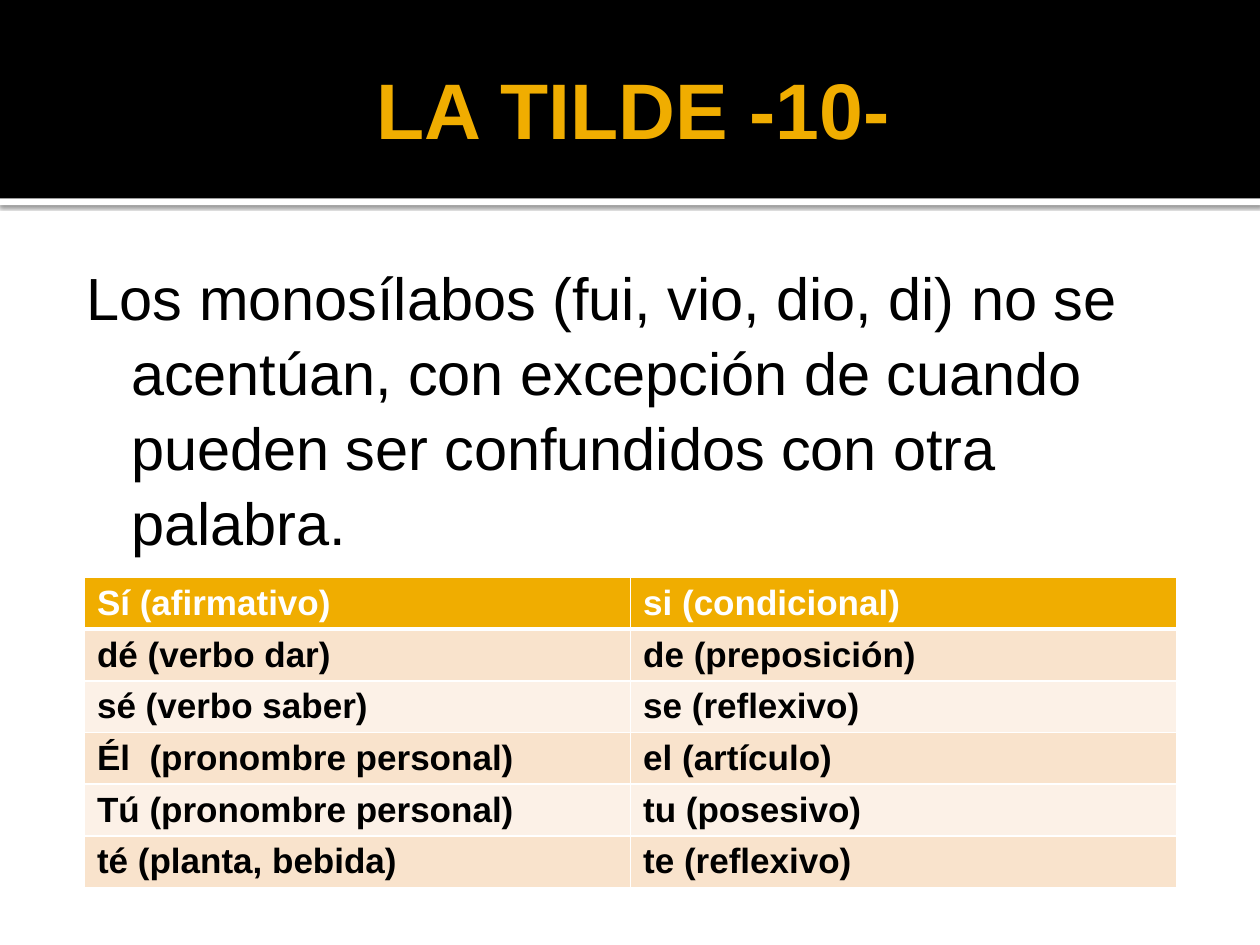
"""Build the slide on accents in Spanish monosyllables."""
import dataclasses

import lxml.etree
import pptx
import pptx.dml.color
import pptx.enum.shapes
import pptx.enum.text
import pptx.oxml
import pptx.oxml.ns
import pptx.util

Inches = pptx.util.Inches
ANCHOR = pptx.enum.text.MSO_ANCHOR
ALIGN = pptx.enum.text.PP_ALIGN


@dataclasses.dataclass(frozen=True)
class Theme:
    width: float = 10
    height: float = 7.5
    font: str = "Arial"
    gold: str = "F0AD00"
    black: str = "000000"
    white: str = "FFFFFF"
    bands: tuple = ("FCF1E7", "F9E3CC")
    title_size: int = 45
    body_size: int = 34
    table_size: int = 20


THEME = Theme()
HEADER_SHARE = 0.21
RULE_TEXT = (
    "Los monosílabos (fui, vio, dio, di) no se acentúan, con excepción "
    "de cuando pueden ser confundidos con otra palabra."
)
WORD_PAIRS = [
    ("Sí (afirmativo)", "si (condicional)"),
    ("dé (verbo dar)", "de (preposición)"),
    ("sé (verbo saber)", "se (reflexivo)"),
    ("Él  (pronombre personal)", "el (artículo)"),
    ("Tú (pronombre personal)", "tu (posesivo)"),
    ("té (planta, bebida)", "te (reflexivo)"),
]


def rgb(color):
    return pptx.dml.color.RGBColor.from_string(color)


def box(left, top, width, height):
    """Turn shares of the slide into lengths."""
    return (
        Inches(left * THEME.width),
        Inches(top * THEME.height),
        Inches(width * THEME.width),
        Inches(height * THEME.height),
    )


def write_text(frame, text, size, color, bold=False, align=ALIGN.LEFT, line_spacing=1.0):
    paragraph = frame.paragraphs[0]
    paragraph.alignment = align
    paragraph.line_spacing = line_spacing
    paragraph.space_before = pptx.util.Pt(0)
    run = paragraph.add_run()
    run.text = text
    run.font.name = THEME.font
    run.font.size = pptx.util.Pt(size)
    run.font.bold = bold
    run.font.color.rgb = rgb(color)
    return paragraph


def place_placeholder(shape, area, margins, anchor):
    shape.left, shape.top, shape.width, shape.height = box(*area)
    frame = shape.text_frame
    frame.word_wrap = True
    frame.auto_size = pptx.enum.text.MSO_AUTO_SIZE.NONE
    frame.vertical_anchor = anchor
    (frame.margin_left, frame.margin_top,
     frame.margin_right, frame.margin_bottom) = map(Inches, margins)
    return frame


def hang_without_bullet(paragraph, margin, indent):
    properties = paragraph._p.get_or_add_pPr()
    properties.set("marL", str(Inches(margin)))
    properties.set("indent", str(Inches(indent)))
    lxml.etree.SubElement(properties, pptx.oxml.ns.qn("a:buNone"))


def add_band(slide, top, height, color, layer):
    """Add a full-width band behind the placeholders."""
    band = slide.shapes.add_shape(
        pptx.enum.shapes.MSO_SHAPE.RECTANGLE, *box(0, top, 1, height))
    band.shadow.inherit = False
    band.fill.solid()
    band.fill.fore_color.rgb = rgb(color)
    band.line.fill.background()
    band.element.getparent().insert(2 + layer, band.element)
    return band


def add_shadow(shape, blur, distance, opacity):
    effects = shape.element.spPr.find(pptx.oxml.ns.qn("a:effectLst"))
    effects.append(pptx.oxml.parse_xml(
        f'<a:outerShdw {pptx.oxml.ns.nsdecls("a")} blurRad="{pptx.util.Pt(blur)}" '
        f'dist="{pptx.util.Pt(distance)}" dir="5400000" algn="t" rotWithShape="0">'
        f'<a:srgbClr val="{THEME.black}"><a:alpha val="{opacity * 1000}"/>'
        "</a:srgbClr></a:outerShdw>"))


def set_borders(cell, **widths):
    properties = cell._tc.get_or_add_tcPr()
    for position, (side, width) in enumerate(widths.items()):
        properties.insert(position, pptx.oxml.parse_xml(
            f'<a:ln{side} {pptx.oxml.ns.nsdecls("a")} w="{pptx.util.Pt(width)}">'
            f'<a:solidFill><a:srgbClr val="{THEME.white}"/></a:solidFill></a:ln{side}>'))


def add_word_table(slide, pairs, area):
    table = slide.shapes.add_table(len(pairs), len(pairs[0]), *box(*area)).table
    for row, pair in enumerate(pairs):
        header = row == 0
        fill = THEME.gold if header else THEME.bands[row % 2]
        color = THEME.white if header else THEME.black
        for column, text in enumerate(pair):
            cell = table.cell(row, column)
            cell.fill.solid()
            cell.fill.fore_color.rgb = rgb(fill)
            write_text(cell.text_frame, text, THEME.table_size, color, bold=True)
            set_borders(cell, L=1, R=1, T=3 if row == 1 else 1, B=3 if header else 1)


def main():
    presentation = pptx.Presentation()
    presentation.slide_width = Inches(THEME.width)
    presentation.slide_height = Inches(THEME.height)
    slide = presentation.slides.add_slide(presentation.slide_layouts[1])

    strip = add_band(slide, HEADER_SHARE, 0.007, THEME.white, layer=0)
    add_shadow(strip, blur=2.5, distance=0.8, opacity=60)
    add_band(slide, 0, HEADER_SHARE, THEME.black, layer=1)

    title = place_placeholder(slide.shapes.title, (0.05, 0.023, 0.9, 0.183),
                              (0.1, 0.05, 0.05, 0.05), ANCHOR.MIDDLE)
    write_text(title, "LA TILDE -10-", THEME.title_size, THEME.gold,
               bold=True, align=ALIGN.CENTER)

    body = place_placeholder(slide.placeholders[1], (0.05, 0.259, 0.9, 0.675),
                             (0.06, 0.1, 0.1, 0.05), ANCHOR.TOP)
    rule = write_text(body, RULE_TEXT, THEME.body_size, THEME.black, line_spacing=1.05)
    hang_without_bullet(rule, margin=0.48, indent=-0.35)

    add_word_table(slide, WORD_PAIRS, (0.067, 0.611, 0.867, 0.328))
    presentation.save("out.pptx")


main()
